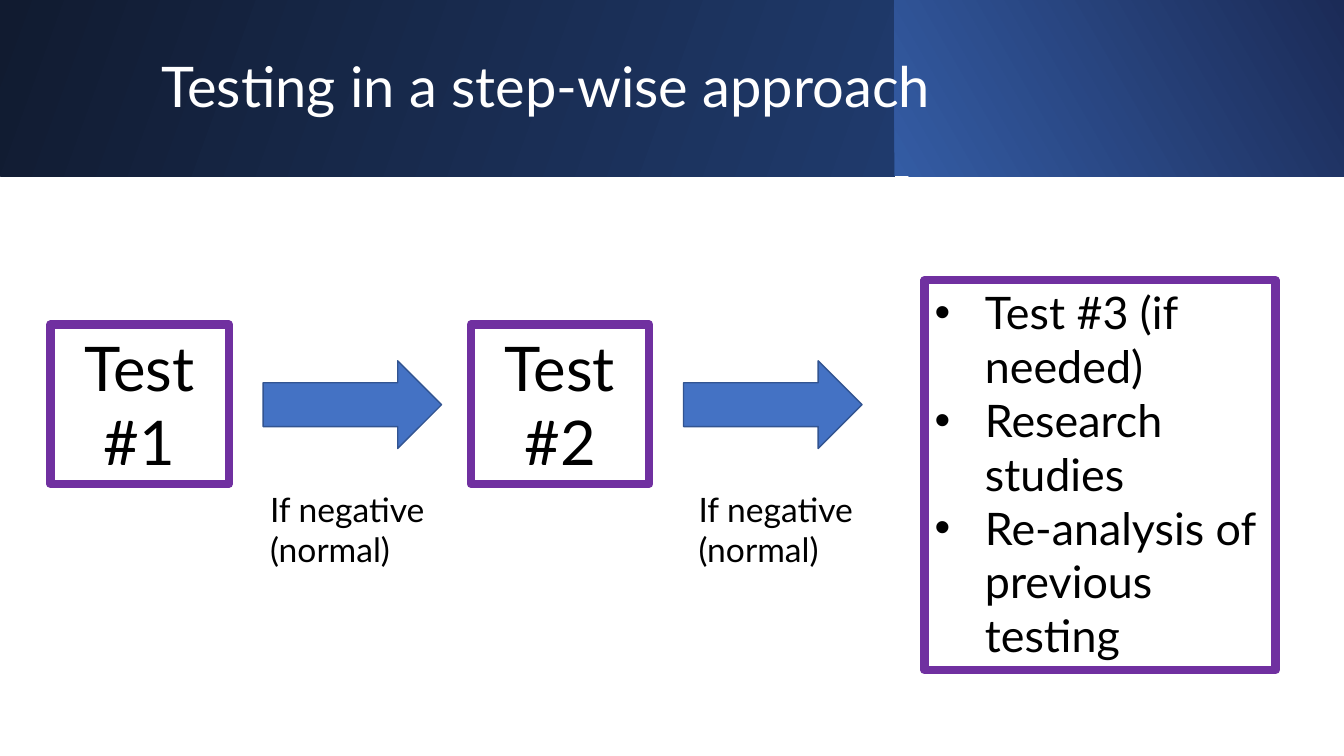
from pptx import Presentation
from pptx.dml.color import RGBColor
from pptx.enum.shapes import MSO_SHAPE
from pptx.enum.text import MSO_ANCHOR, PP_ALIGN
from pptx.util import Inches, Pt
from lxml import etree

RECT, ARROW = MSO_SHAPE.RECTANGLE, MSO_SHAPE.RIGHT_ARROW
TOP, MIDDLE = MSO_ANCHOR.TOP, MSO_ANCHOR.MIDDLE
LEFT, CENTER = PP_ALIGN.LEFT, PP_ALIGN.CENTER

FONT = "Lato"
BLACK, WHITE, PURPLE = "000000", "FFFFFF", "7030A0"
BLUE, EDGE = "4472C4", "325491"

TITLE = "Testing in a step-wise approach"
TESTS = ["Test #1", "Test #2"]
RESULT = "If negative (normal)"
OPTIONS = ["Test #3 (if needed)", "Research studies",
           "Re-analysis of previous testing"]

WIDE, TALL = 13.33, 7.5
BAND, SPLIT = 1.75, 8.87
# left, width, start colour, end colour, angle
BANDS = [(0, SPLIT, "111B30", "1F3A6C", 340),
         (SPLIT, WIDE - SPLIT, "345CA4", "1B2B57", 30)]
START, STEP, SIDE = 0.5, 4.17, 1.77


def color(code):
    return RGBColor.from_string(code)


def add_shape(kind, *place, fill=None, line=None, weight=1):
    shape = slide.shapes.add_shape(kind, *map(Inches, place))
    shape.shadow.inherit = False
    if fill:
        shape.fill.solid()
        shape.fill.fore_color.rgb = color(fill)
    else:
        shape.fill.background()
    if line:
        shape.line.color.rgb = color(line)
        shape.line.width = Pt(weight)
    else:
        shape.line.fill.background()
    return shape


def add_band(left, width, first, last, angle):
    fill = add_shape(RECT, left, 0, width, BAND).fill
    fill.gradient()
    fill.gradient_angle = angle
    for stop, code in zip(fill.gradient_stops, (first, last)):
        stop.color.rgb = color(code)


def add_bullet(para):
    props = para._p.get_or_add_pPr()
    props.set("marL", str(Inches(0.5)))
    props.set("indent", str(-Inches(0.5)))
    space = props.nsmap["a"]
    etree.SubElement(props, f"{{{space}}}buFont", typeface="Arial")
    etree.SubElement(props, f"{{{space}}}buChar", char="•")


def write(shape, *lines, size, ink=BLACK, align=LEFT, anchor=TOP,
          bullet=False, spacing=None):
    frame = shape.text_frame
    frame.word_wrap = True
    frame.vertical_anchor = anchor
    for i, line in enumerate(lines):
        para = frame.add_paragraph() if i else frame.paragraphs[0]
        para.alignment = align
        if spacing:
            para.line_spacing = spacing
        if bullet:
            add_bullet(para)
        run = para.add_run()
        run.text = line
        run.font.name = FONT
        run.font.size = Pt(size)
        run.font.color.rgb = color(ink)


def add_text(text, *place, **style):
    write(slide.shapes.add_textbox(*map(Inches, place)), text, **style)


deck = Presentation()
deck.slide_width, deck.slide_height = Inches(WIDE), Inches(TALL)
slide = deck.slides.add_slide(deck.slide_layouts[6])

for band in BANDS:
    add_band(*band)
add_text(TITLE, 1.5, 0.32, 10.82, 1.13, size=40, ink=WHITE,
         anchor=MIDDLE, spacing=0.9)

for i, test in enumerate(TESTS):
    left = START + i * STEP
    box = add_shape(RECT, left, 3.22, SIDE, 1.58, line=PURPLE, weight=6)
    write(box, test, size=44, align=CENTER)
    add_shape(ARROW, left + 2.11, 3.58, SIDE, 0.87, fill=BLUE, line=EDGE)
    add_text(RESULT, 2.58 + i * 4.25, 4.8, SIDE, 0.91, size=24)

box = add_shape(RECT, 9.17, 2.78, 3.48, 3.87, line=PURPLE, weight=6)
write(box, *OPTIONS, size=32, bullet=True)

deck.save("out.pptx")
